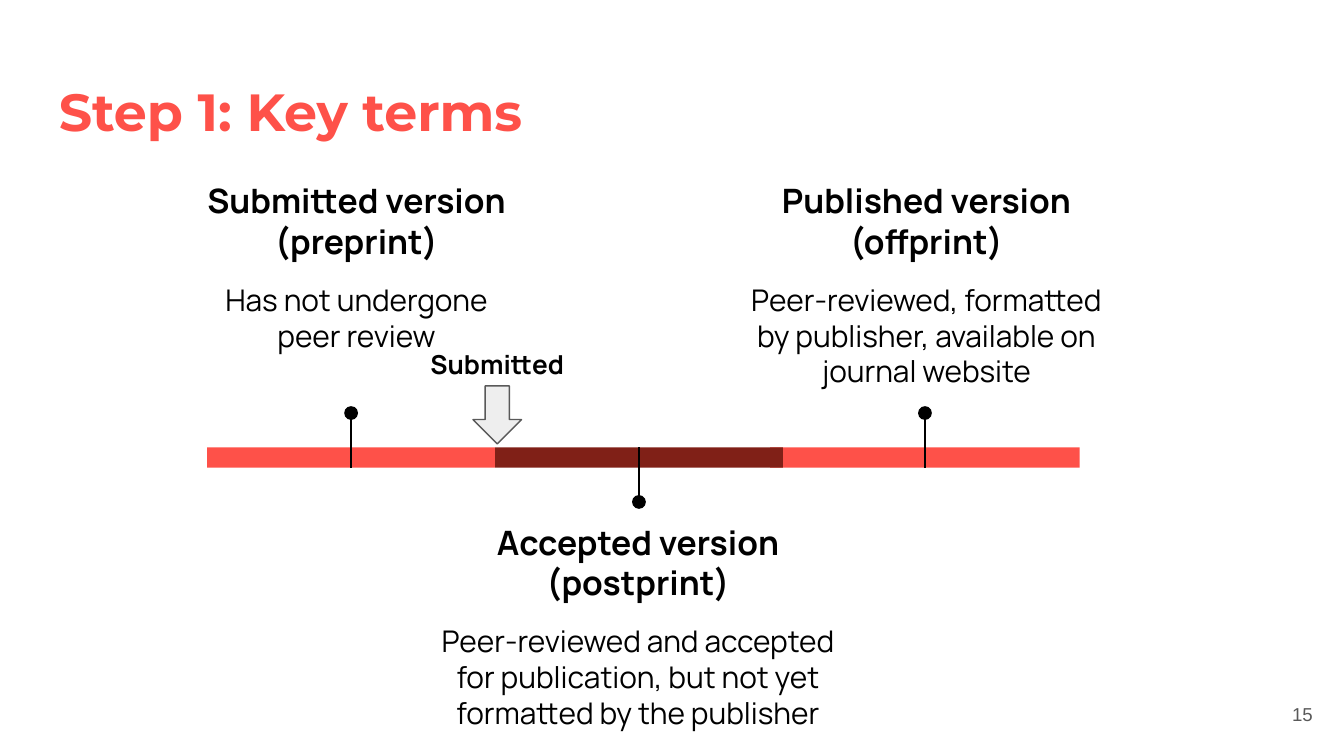
"""Build a slide with a timeline of the three versions of a journal article."""
from dataclasses import dataclass

import pptx
import pptx.dml.color
import pptx.enum.shapes
import pptx.enum.text
import pptx.oxml
import pptx.oxml.ns
import pptx.shapes.base
import pptx.slide
import pptx.text.text
import pptx.util

Pt = pptx.util.Pt
RGBColor = pptx.dml.color.RGBColor
Shape = pptx.enum.shapes.MSO_SHAPE
Align = pptx.enum.text.PP_ALIGN
Anchor = pptx.enum.text.MSO_ANCHOR

CORAL = RGBColor(0xFE, 0x51, 0x49)
MAROON = RGBColor(0x80, 0x20, 0x17)
BLACK = RGBColor(0, 0, 0)
GRAY = RGBColor(0x59, 0x59, 0x59)
PALE_GRAY = RGBColor(0xEE, 0xEE, 0xEE)

BODY_FONT = "Manrope"
BAR_TOP = 239.7
BAR_HEIGHT = 10.8
DOT_SIZE = 7.4
DOT_DISTANCE = 23.8
INSET = 7.2


@dataclass(frozen=True)
class Box:
    left: float
    top: float
    width: float
    height: float

    def lengths(self) -> tuple[pptx.util.Length, ...]:
        return Pt(self.left), Pt(self.top), Pt(self.width), Pt(self.height)


@dataclass(frozen=True)
class TextStyle:
    size: float
    color: RGBColor = BLACK
    font: str = BODY_FONT
    bold: bool = False
    align: Align = Align.CENTER


@dataclass(frozen=True)
class Stage:
    heading: str
    description: str
    bar_left: float
    bar_width: float
    color: RGBColor
    text_box: Box
    above: bool = True


HEADING = TextStyle(18, bold=True)
DESCRIPTION = TextStyle(16)
TITLE = TextStyle(28, CORAL, "Montserrat", True, Align.LEFT)
PAGE_NUMBER = TextStyle(10, GRAY, "Arial", align=Align.RIGHT)
MILESTONE = TextStyle(14, bold=True)

STAGES = (
    Stage("Published version (offprint)",
          "Peer-reviewed, formatted by publisher, available on journal website",
          412.6, 165.8, CORAL, Box(385.6, 89.4, 221.4, 74)),
    Stage("Submitted version (preprint)", "Has not undergone peer review",
          111, 154.2, CORAL, Box(102.4, 89.4, 177.2, 74)),
    Stage("Accepted version (postprint)",
          "Peer-reviewed and accepted for publication, but not yet formatted by the publisher",
          265.2, 154.2, MAROON, Box(227, 272.4, 229.6, 74), above=False),
)


def write(paragraph: pptx.text.text._Paragraph, text: str, style: TextStyle) -> None:
    paragraph.text = text
    paragraph.alignment = style.align
    for run in paragraph.runs:
        run.font.size = Pt(style.size)
        run.font.name = style.font
        run.font.bold = style.bold
        run.font.color.rgb = style.color


def add_text(slide: pptx.slide.Slide, box: Box, text: str, style: TextStyle,
             anchor: Anchor = Anchor.TOP) -> pptx.text.text.TextFrame:
    text_frame = slide.shapes.add_textbox(*box.lengths()).text_frame
    text_frame.word_wrap = True
    text_frame.vertical_anchor = anchor
    text_frame.margin_left = text_frame.margin_right = Pt(INSET)
    text_frame.margin_top = text_frame.margin_bottom = Pt(INSET)
    write(text_frame.paragraphs[0], text, style)
    return text_frame


def add_filled_shape(slide: pptx.slide.Slide, kind: Shape, box: Box,
                     color: RGBColor) -> pptx.shapes.base.BaseShape:
    shape = slide.shapes.add_shape(kind, *box.lengths())
    shape.shadow.inherit = False
    shape.fill.solid()
    shape.fill.fore_color.rgb = color
    shape.line.fill.background()
    return shape


def add_stage(slide: pptx.slide.Slide, stage: Stage) -> None:
    bar = add_filled_shape(slide, Shape.RECTANGLE,
                           Box(stage.bar_left, BAR_TOP, stage.bar_width, BAR_HEIGHT), stage.color)
    center = stage.bar_left + stage.bar_width / 2
    bar_middle = BAR_TOP + BAR_HEIGHT / 2
    dot_middle = bar_middle + (-DOT_DISTANCE if stage.above else DOT_DISTANCE)

    stem = slide.shapes.add_connector(pptx.enum.shapes.MSO_CONNECTOR.STRAIGHT,
                                      Pt(center), Pt(dot_middle), Pt(center), Pt(bar_middle))
    stem.end_connect(bar, 2 if stage.above else 0)
    stem.line.color.rgb = BLACK
    stem.line.width = Pt(0.75)
    stem._element.spPr.append(pptx.oxml.parse_xml(
        f"<a:effectLst {pptx.oxml.ns.nsdecls('a')}/>"))

    add_filled_shape(slide, Shape.OVAL, Box(center - DOT_SIZE / 2, dot_middle - DOT_SIZE / 2,
                                            DOT_SIZE, DOT_SIZE), BLACK)

    text_frame = add_text(slide, stage.text_box, stage.heading, HEADING)
    description = text_frame.add_paragraph()
    write(description, stage.description, DESCRIPTION)
    description.space_before = Pt(11)


def main() -> None:
    presentation = pptx.Presentation()
    presentation.slide_width = Pt(720)
    presentation.slide_height = Pt(405)
    slide = presentation.slides.add_slide(presentation.slide_layouts[6])

    add_text(slide, Box(24.5, 35, 598.4, 45.4), "Step 1: Key terms", TITLE)
    add_text(slide, Box(667.2, 367.2, 43.2, 31), "15", PAGE_NUMBER, Anchor.MIDDLE)

    for stage in STAGES:
        add_stage(slide, stage)

    arrow = add_filled_shape(slide, Shape.DOWN_ARROW, Box(253.4, 206.8, 26, 31), PALE_GRAY)
    arrow.line.color.rgb = GRAY
    arrow.line.width = Pt(0.75)
    add_text(slide, Box(212.4, 179.3, 108, 31), "Submitted", MILESTONE)

    presentation.save("out.pptx")


if __name__ == "__main__":
    main()
